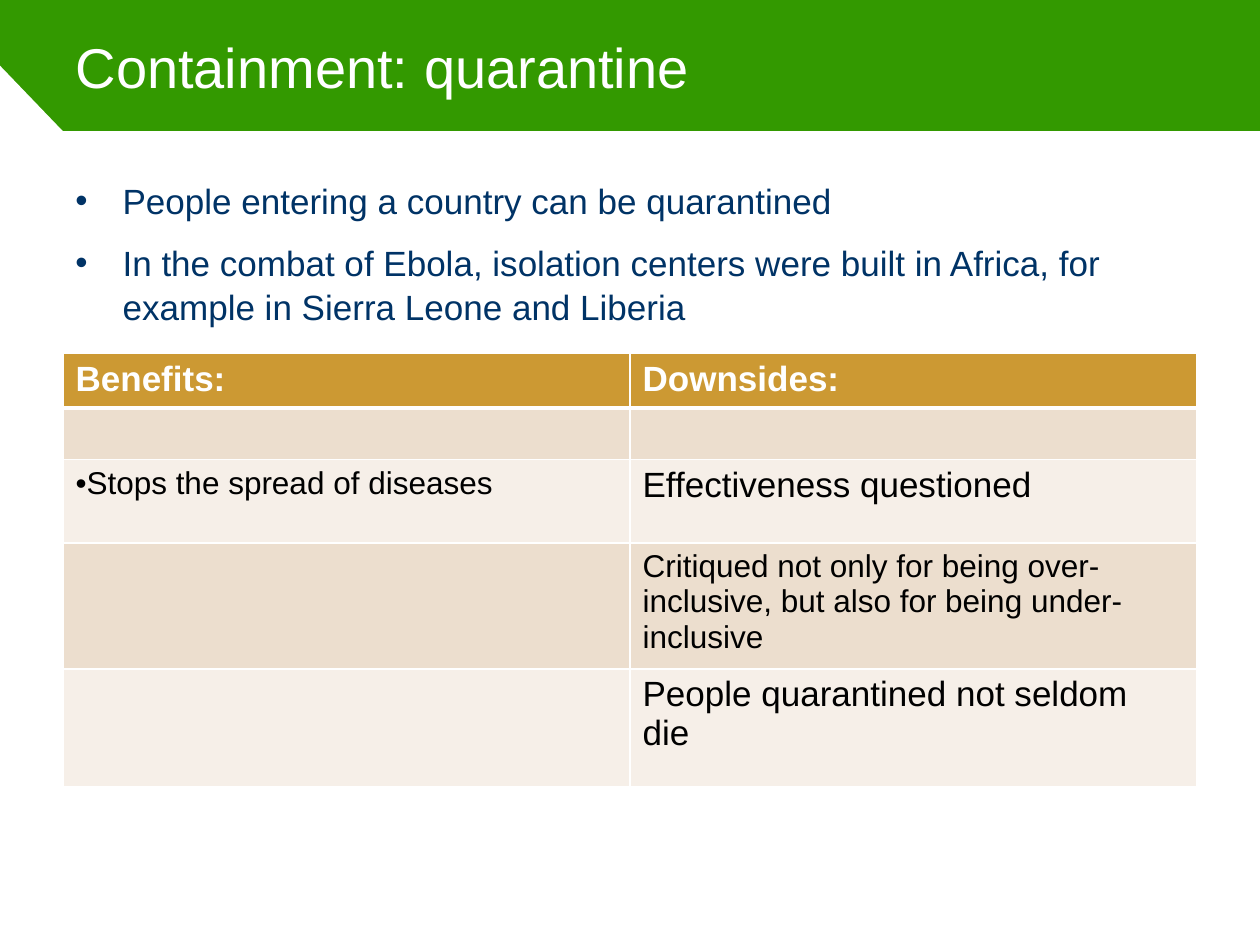
from lxml.etree import SubElement
from pptx import Presentation
from pptx.dml.color import RGBColor
from pptx.enum.text import MSO_ANCHOR as Anchor, PP_ALIGN as Align
from pptx.oxml.ns import qn
from pptx.util import Pt

GREEN = RGBColor(0x33, 0x99, 0x00)
WHITE = RGBColor(0xFF, 0xFF, 0xFF)
BLACK = RGBColor(0x00, 0x00, 0x00)
NAVY = RGBColor(0x00, 0x33, 0x66)
GOLD = RGBColor(0xCC, 0x99, 0x33)
SAND = RGBColor(0xEC, 0xDE, 0xCE)
CREAM = RGBColor(0xF6, 0xEF, 0xE8)

SLIDE_WIDTH, SLIDE_HEIGHT = 720, 540
MARGIN = 36
CONTENT_WIDTH = SLIDE_WIDTH - 2 * MARGIN
HEADER_HEIGHT = 75

BULLETS = [
    "People entering a country can be quarantined",
    "In the combat of Ebola, isolation centers were built in Africa, "
    "for example in Sierra Leone and Liberia",
]
TABLE_ROWS = [
    (29.5, GOLD, [("Benefits:", 20), ("Downsides:", 20)]),
    (29.5, SAND, [None, None]),
    (47.5, CREAM, [("Stops the spread of diseases", 18), ("Effectiveness questioned", 20)]),
    (67.5, SAND, [None, ("Critiqued not only for being over-inclusive, "
                         "but also for being under-inclusive", 18)]),
    (67.5, CREAM, [None, ("People quarantined not seldom die", 20)]),
]


def write_text(paragraph, text, size=20, color=BLACK, bold=False, bullet=False,
               indent=0, before=0, after=0, spacing=None):
    paragraph.alignment = Align.LEFT
    paragraph.space_before = Pt(before)
    paragraph.space_after = Pt(after)
    if spacing:
        paragraph.line_spacing = spacing
    if bullet:
        properties = paragraph._p.get_or_add_pPr()
        properties.set("marL", str(Pt(indent)))
        properties.set("indent", str(-Pt(indent)))
        SubElement(properties, qn("a:buFont"), typeface="Arial")
        SubElement(properties, qn("a:buChar"), char="•")
    run = paragraph.add_run()
    run.text = text
    run.font.name = "Arial"
    run.font.size = Pt(size)
    run.font.bold = bold
    run.font.color.rgb = color


def add_title(slide, text):
    title = slide.shapes.title
    title.left, title.top = Pt(MARGIN), Pt(0)
    title.width, title.height = Pt(CONTENT_WIDTH), Pt(HEADER_HEIGHT)
    title.text_frame.vertical_anchor = Anchor.MIDDLE
    write_text(title.text_frame.paragraphs[0], text, size=32, color=WHITE)


def add_content_panel(slide):
    builder = slide.shapes.build_freeform(Pt(MARGIN), Pt(HEADER_HEIGHT))
    corners = [(0, HEADER_HEIGHT / 2), (0, SLIDE_HEIGHT),
               (SLIDE_WIDTH, SLIDE_HEIGHT), (SLIDE_WIDTH, HEADER_HEIGHT)]
    builder.add_line_segments([(Pt(x), Pt(y)) for x, y in corners], close=True)
    panel = builder.convert_to_shape()
    panel.shadow.inherit = False
    panel.fill.solid()
    panel.fill.fore_color.rgb = WHITE
    panel.line.fill.background()


def add_bullets(slide, texts):
    box = slide.shapes.add_textbox(Pt(MARGIN), Pt(98), Pt(CONTENT_WIDTH), Pt(368))
    frame = box.text_frame
    frame.word_wrap = True
    for index, text in enumerate(texts):
        paragraph = frame.add_paragraph() if index else frame.paragraphs[0]
        write_text(paragraph, text, color=NAVY, bullet=True, indent=27,
                   before=4 if index else 0, after=6, spacing=1.05)


def set_borders(cell, **widths):
    properties = cell._tc.get_or_add_tcPr()
    for side in "LRTB":
        line = SubElement(properties, qn(f"a:ln{side}"), w=str(Pt(widths.get(side, 1))))
        fill = SubElement(line, qn("a:solidFill"))
        SubElement(fill, qn("a:srgbClr"), val=str(WHITE))


def add_comparison_table(slide):
    height = sum(row[0] for row in TABLE_ROWS)
    table = slide.shapes.add_table(len(TABLE_ROWS), 2, Pt(MARGIN), Pt(202),
                                   Pt(CONTENT_WIDTH), Pt(height)).table
    for row_index, (row_height, color, contents) in enumerate(TABLE_ROWS):
        table.rows[row_index].height = Pt(row_height)
        header = row_index == 0
        for column, content in enumerate(contents):
            cell = table.cell(row_index, column)
            set_borders(cell, T=3 if row_index == 1 else 1, B=3 if header else 1)
            cell.fill.solid()
            cell.fill.fore_color.rgb = color
            if content:
                text, size = content
                write_text(cell.text_frame.paragraphs[0], text, size=size, bold=header,
                           color=WHITE if header else BLACK,
                           bullet=column == 0 and not header)


def main():
    presentation = Presentation()
    presentation.slide_width = Pt(SLIDE_WIDTH)
    presentation.slide_height = Pt(SLIDE_HEIGHT)
    slide = presentation.slides.add_slide(presentation.slide_layouts[5])
    slide.background.fill.solid()
    slide.background.fill.fore_color.rgb = GREEN
    add_content_panel(slide)
    add_title(slide, "Containment: quarantine")
    add_bullets(slide, BULLETS)
    add_comparison_table(slide)
    presentation.save("out.pptx")


if __name__ == "__main__":
    main()
